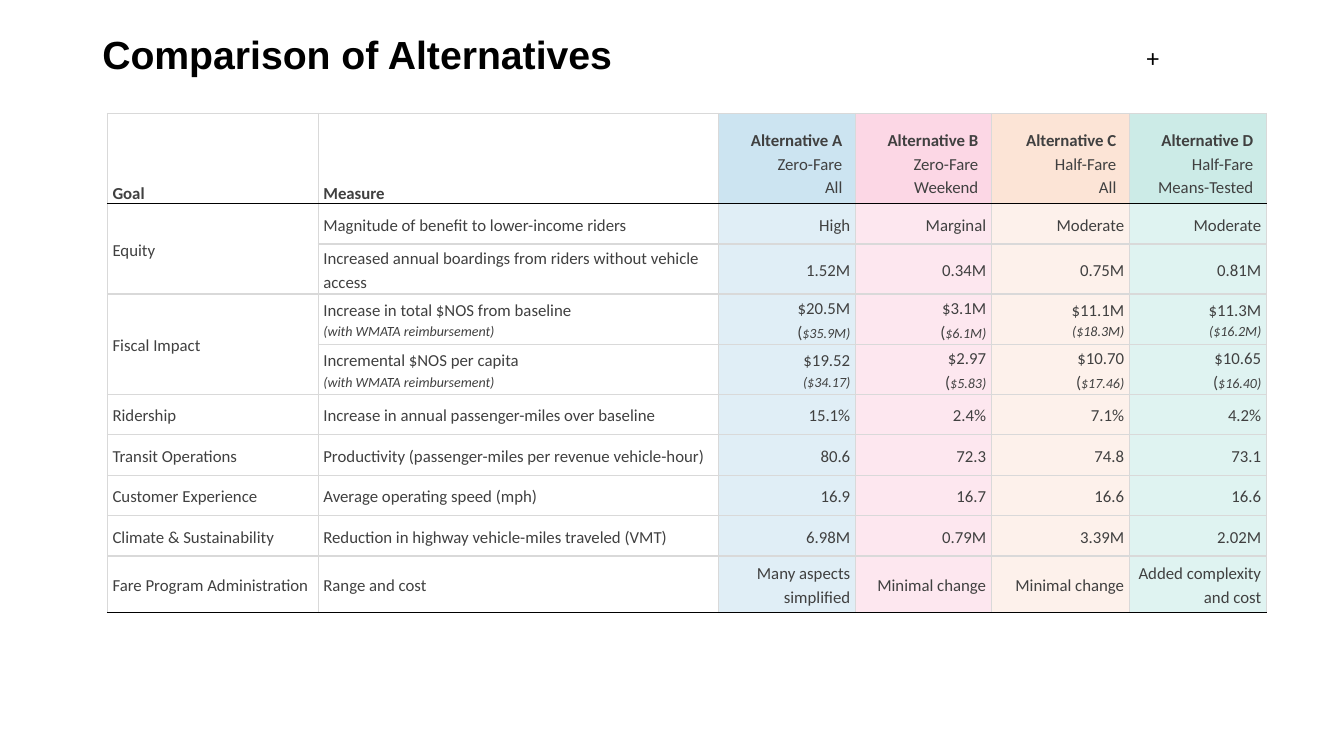
import copy

import pptx
import pptx.dml.color
import pptx.enum.text
import pptx.oxml
import pptx.oxml.ns
import pptx.util

Pt = pptx.util.Pt
RGBColor = pptx.dml.color.RGBColor
ALIGN = pptx.enum.text.PP_ALIGN
ANCHOR = pptx.enum.text.MSO_ANCHOR

BLACK = RGBColor(0x00, 0x00, 0x00)
TEXT_GRAY = RGBColor(0x40, 0x40, 0x40)
RULE_GRAY = RGBColor(0xD9, 0xD9, 0xD9)
HEADER_FILLS = [RGBColor(0xCC, 0xE4, 0xF1), RGBColor(0xFC, 0xD7, 0xE5),
                RGBColor(0xFC, 0xE4, 0xD6), RGBColor(0xCC, 0xEB, 0xE7)]
BODY_FILLS = [RGBColor(0xE0, 0xEE, 0xF6), RGBColor(0xFD, 0xE7, 0xEF),
              RGBColor(0xFD, 0xF1, 0xEB), RGBColor(0xDF, 0xF3, 0xF1)]

# In cell text "\n" starts a paragraph, "\v" breaks a line and "|" toggles the accent format.
TITLE = "Comparison of Alternatives"
HEADER = ["|Goal", "|Measure",
          "|Alternative A\v|Zero-Fare\vAll",
          "|Alternative B\v|Zero-Fare Weekend",
          "|Alternative C\v|Half-Fare\nAll",
          "|Alternative D\v|Half-Fare\nMeans-Tested"]
# An empty goal continues the goal above it.
BODY = [
    ["Equity", "Magnitude of benefit to lower-income riders",
     "High", "Marginal", "Moderate", "Moderate"],
    ["", "Increased annual boardings from riders without vehicle access",
     "1.52M", "0.34M", "0.75M", "0.81M"],
    ["Fiscal Impact", "Increase in total $NOS from baseline\n|(with WMATA reimbursement)",
     "$20.5M\v(|$35.9M)", "$3.1M\v(|$6.1M)", "$11.1M\n|($18.3M)", "$11.3M\n|($16.2M)"],
    ["", "Incremental $NOS per capita\n|(with WMATA reimbursement)",
     "$19.52\n|($34.17)", "$2.97\v(|$5.83)", "$10.70\v(|$17.46)", "$10.65\v(|$16.40)"],
    ["Ridership", "Increase in annual passenger-miles over baseline",
     "15.1%", "2.4%", "7.1%", "4.2%"],
    ["Transit Operations", "Productivity (passenger-miles per revenue vehicle-hour)",
     "80.6", "72.3", "74.8", "73.1"],
    ["Customer Experience", "Average operating speed (mph)",
     "16.9", "16.7", "16.6", "16.6"],
    ["Climate & Sustainability", "Reduction in highway vehicle-miles traveled (VMT)",
     "6.98M", "0.79M", "3.39M", "2.02M"],
    ["Fare Program Administration", "Range and cost",
     "Many aspects simplified", "Minimal change", "Minimal change",
     "Added complexity and cost"],
]
COLUMN_WIDTHS = [150.6, 285.8, 97.8, 97.1, 98.6, 97.9]
ROW_HEIGHTS = [64.3, 28.9, 35.8, 35.8, 35.8, 28.9, 28.9, 28.9, 28.9, 40.4]
TABLE_LEFT, TABLE_TOP = 76.8, 81.1
LABEL_COLUMNS = 2
INSET = 3.6
HEADER_INDENT = 5.6


def write(frame, text, font="Calibri", size=12, color=TEXT_GRAY, bold=False,
          accent_bold=False, accent_italic=False, accent_size=None,
          align=ALIGN.LEFT, spacing=1.0, indent=0):
    for number, line in enumerate(text.split("\n")):
        paragraph = frame.paragraphs[0] if number == 0 else frame.add_paragraph()
        paragraph.alignment = align
        paragraph.line_spacing = spacing
        if indent:
            properties = paragraph._p.get_or_add_pPr()
            for side in ("marL", "marR"):
                properties.set(side, str(int(Pt(indent))))
        for position, piece in enumerate(line.split("|")):
            accented = position % 2 == 1
            for part_number, part in enumerate(piece.split("\v")):
                if part_number:
                    paragraph.add_line_break()
                    paragraph._p[-1].append(copy.deepcopy(run._r.rPr))
                if not part:
                    continue
                run = paragraph.add_run()
                run.text = part
                run.font.name = font
                run.font.size = Pt(accent_size if accented and accent_size else size)
                run.font.color.rgb = color
                run.font.bold = bold or (accented and accent_bold)
                run.font.italic = accented and accent_italic


def draw_borders(cell, top, bottom):
    for side, color in (("L", RULE_GRAY), ("R", RULE_GRAY), ("T", top), ("B", bottom)):
        cell._tc.get_or_add_tcPr().append(pptx.oxml.parse_xml(
            f'<a:ln{side} {pptx.oxml.ns.nsdecls("a")} w="{int(Pt(1))}">'
            f'<a:solidFill><a:srgbClr val="{color}"/></a:solidFill></a:ln{side}>'))


def fill_cell(cell, text, row, column):
    is_header = row == 0
    is_value = column >= LABEL_COLUMNS
    last_row = len(BODY)
    draw_borders(cell, BLACK if row == 1 else RULE_GRAY,
                 BLACK if row in (0, last_row) else RULE_GRAY)
    if is_value:
        fills = HEADER_FILLS if is_header else BODY_FILLS
        cell.fill.solid()
        cell.fill.fore_color.rgb = fills[column - LABEL_COLUMNS]
    else:
        cell.fill.background()
    cell.margin_left = cell.margin_right = Pt(INSET)
    cell.margin_top = cell.margin_bottom = Pt(INSET if is_header and is_value else 0)
    cell.vertical_anchor = ANCHOR.BOTTOM if is_header else ANCHOR.MIDDLE
    if text:
        write(cell.text_frame, text,
              accent_bold=is_header, accent_italic=not is_header,
              accent_size=None if is_header else 10,
              align=ALIGN.RIGHT if is_value else ALIGN.LEFT,
              spacing=1.0 if is_header and not is_value else 1.15,
              indent=HEADER_INDENT if is_header and is_value else 0)


def add_comparison_table(slide):
    rows = [HEADER] + BODY
    table = slide.shapes.add_table(
        len(rows), len(HEADER), Pt(TABLE_LEFT), Pt(TABLE_TOP),
        Pt(sum(COLUMN_WIDTHS)), Pt(sum(ROW_HEIGHTS))).table
    table.first_row = table.horz_banding = False
    for column, width in zip(table.columns, COLUMN_WIDTHS):
        column.width = Pt(width)
    for table_row, height in zip(table.rows, ROW_HEIGHTS):
        table_row.height = Pt(height)
    for row, texts in enumerate(rows):
        for column, text in enumerate(texts):
            fill_cell(table.cell(row, column), text, row, column)
        if not texts[0]:
            table.cell(row - 1, 0).merge(table.cell(row, 0))


def main():
    deck = pptx.Presentation()
    deck.slide_width, deck.slide_height = Pt(960), Pt(540)
    slide = deck.slides.add_slide(deck.slide_layouts[6])

    plus = slide.shapes.add_textbox(Pt(812), Pt(26.6), Pt(24), Pt(29)).text_frame
    plus.word_wrap = False
    write(plus, "+", size=18, color=BLACK)

    title = slide.shapes.add_textbox(Pt(66), Pt(0), Pt(828), Pt(81)).text_frame
    title.word_wrap = True
    title.vertical_anchor = ANCHOR.MIDDLE
    write(title, TITLE, font="Arial", size=28, color=BLACK, bold=True, spacing=0.9)

    add_comparison_table(slide)
    deck.save("out.pptx")


if __name__ == "__main__":
    main()
